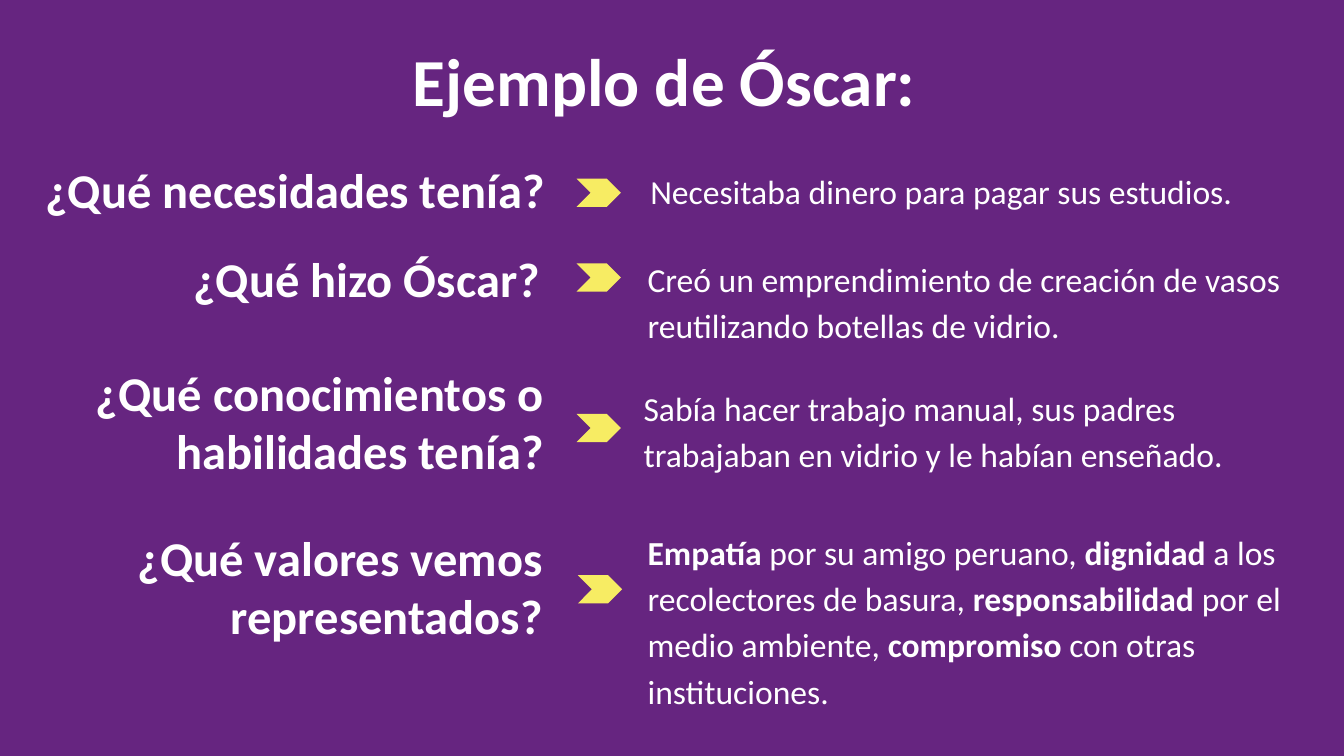
from dataclasses import dataclass

from pptx import Presentation
from pptx import util as u
from pptx.dml.color import RGBColor
from pptx.enum import shapes, text

PURPLE = RGBColor(0x66, 0x25, 0x80)
YELLOW = RGBColor(0xF7, 0xEC, 0x63)
WHITE = RGBColor(0xFF, 0xFF, 0xFF)
WIDTH = 10
HEIGHT = WIDTH * 9 / 16
INSET = u.Inches(0.1)
LEFT, CENTER, RIGHT = text.PP_ALIGN.LEFT, text.PP_ALIGN.CENTER, text.PP_ALIGN.RIGHT
ANSWER_FORMAT = {"line_spacing": 1.15, "space_after": u.Pt(16)}

Box = tuple[float, float, float, float]


@dataclass(frozen=True)
class Row:
    question: str
    question_box: Box
    question_align: text.PP_ALIGN
    answer: str
    answer_box: Box
    chevron_left: float
    chevron_top: float


ROWS = [
    Row("¿Qué necesidades tenía?", (0.24, 1.09, 3.99, 0.57), LEFT,
        "Necesitaba dinero para pagar sus estudios.",
        (4.74, 1.13, 5.08, 0.49), 4.29, 1.33),
    Row("¿Qué hizo Óscar?", (1.34, 1.75, 2.83, 0.5), LEFT,
        "Creó un emprendimiento de creación de vasos reutilizando botellas de vidrio.",
        (4.72, 1.78, 5.08, 0.94), 4.29, 1.96),
    Row("¿Qué conocimientos o habilidades tenía?", (0.24, 2.6, 3.91, 1.08), RIGHT,
        "Sabía hacer trabajo manual, sus padres trabajaban en vidrio y le habían enseñado.",
        (4.69, 2.74, 5.08, 0.94), 4.29, 3.08),
    Row("¿Qué valores vemos representados?", (0.24, 3.83, 3.9, 0.79), RIGHT,
        "*Empatía *por su amigo peruano, *dignidad *a los recolectores de basura, "
        "*responsabilidad *por el medio ambiente, *compromiso *con otras instituciones.",
        (4.72, 3.81, 5.08, 1.51), 4.3, 4.28),
]


def set_all(target, values: dict) -> None:
    for name, value in values.items():
        setattr(target, name, value)


def add_filled(slide, preset: shapes.MSO_SHAPE, box: Box, color: RGBColor) -> None:
    figure = slide.shapes.add_shape(preset, *map(u.Inches, box))
    figure.shadow.inherit = False
    figure.fill.solid()
    figure.fill.fore_color.rgb = color
    figure.line.fill.background()


def add_words(slide, words: str, box: Box, size: int, bold: bool, layout: dict) -> None:
    frame = slide.shapes.add_textbox(*map(u.Inches, box)).text_frame
    set_all(frame, {
        "word_wrap": True,
        "vertical_anchor": text.MSO_ANCHOR.TOP,
        "margin_left": INSET,
        "margin_right": INSET,
        "margin_top": INSET,
        "margin_bottom": INSET,
    })
    paragraph = frame.paragraphs[0]
    set_all(paragraph, layout)
    for index, piece in enumerate(words.split("*")):
        if piece:
            run = paragraph.add_run()
            run.text = piece
            emphasized = bold or index % 2 == 1
            set_all(run.font, {"name": "Calibri", "size": u.Pt(size), "bold": emphasized})
            run.font.color.rgb = WHITE


def add_row(slide, row: Row) -> None:
    add_words(slide, row.question, row.question_box, 26, True,
              {"alignment": row.question_align})
    add_words(slide, row.answer, row.answer_box, 18, False, ANSWER_FORMAT)
    add_filled(slide, shapes.MSO_SHAPE.CHEVRON,
               (row.chevron_left, row.chevron_top, 0.33, 0.21), YELLOW)


def main() -> None:
    deck = Presentation()
    set_all(deck, {"slide_width": u.Inches(WIDTH), "slide_height": u.Inches(HEIGHT)})
    slide = deck.slides.add_slide(deck.slide_layouts[6])
    add_filled(slide, shapes.MSO_SHAPE.RECTANGLE, (0, 0, WIDTH, HEIGHT), PURPLE)
    add_words(slide, "Ejemplo de Óscar: ", (0.34, 0.19, 9.32, 0.63), 36, True,
              {"alignment": CENTER})
    for row in ROWS:
        add_row(slide, row)
    deck.save("out.pptx")


if __name__ == "__main__":
    main()
